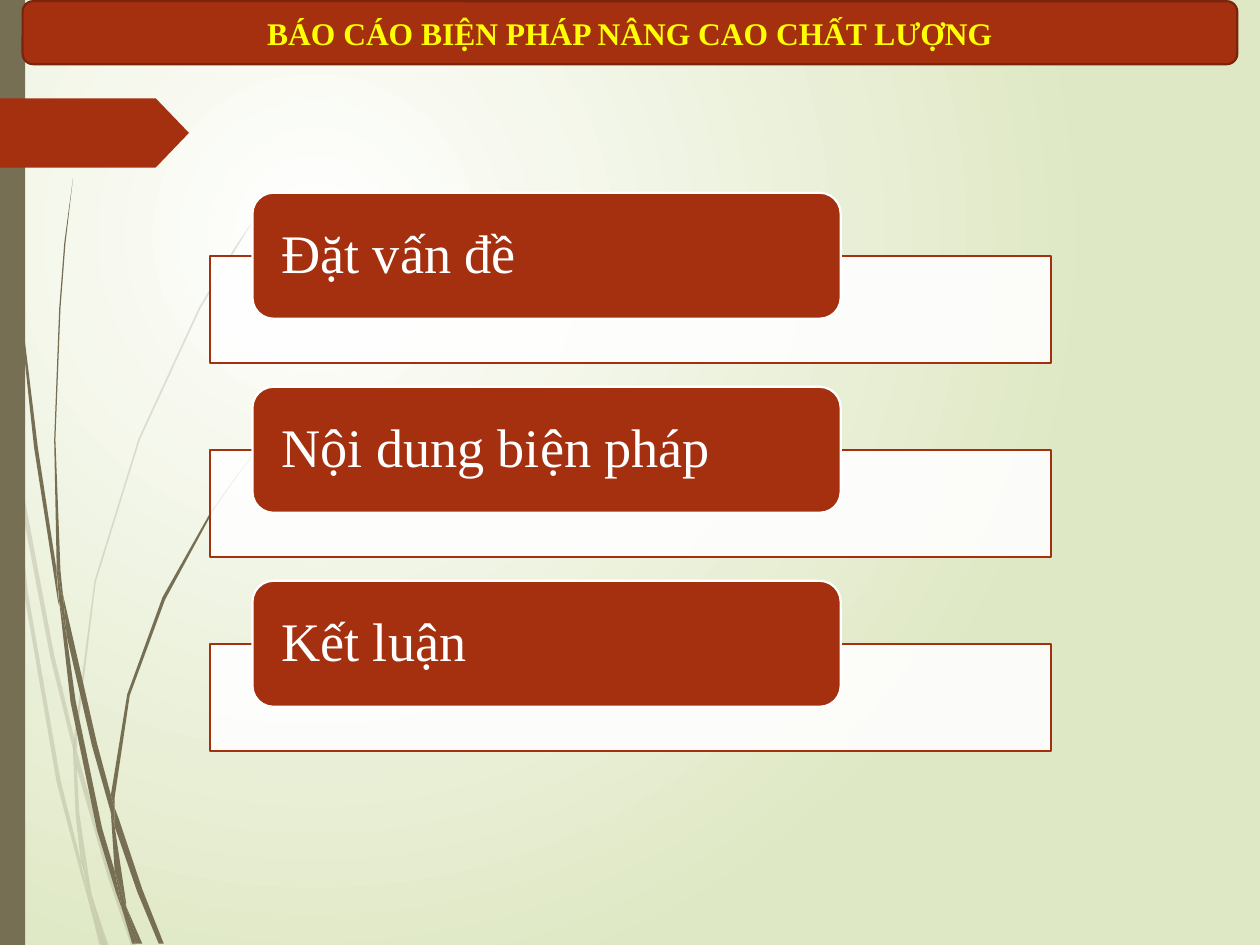
import pptx
import pptx.dml.color
import pptx.enum.shapes
import pptx.enum.text
import pptx.oxml
import pptx.oxml.ns
import pptx.util
import lxml.etree

Inches = pptx.util.Inches
SHAPES = pptx.enum.shapes.MSO_SHAPE
ALIGN = pptx.enum.text.PP_ALIGN

RUST, DARK_RUST, OLIVE = "A53010", "7A240C", "766F54"
WHITE, PALE_GREEN, YELLOW = "FFFFFF", "DFE8C4", "FFFF00"
FONT = "Times New Roman"

FADED_BLADES = [
    "0.08,3.5 0.06,3.22 0,2.82 0,2.99 0.07,3.44",
    "0.4,5.22 0.59,5.99 0.59,5.86 0.43,5.2 0.1,3.45 0.12,3.76",
    "0.64,6.07 0.61,5.96 0.61,6.1 0.85,6.94 1.04,7.5 1.08,7.5 0.88,6.92",
    "0.83,7.5 0.86,7.5 0.73,7.11",
    "0.64,6.83 0.48,6.19 0.22,4.69 0.12,3.76 0.08,3.5 0.19,4.7 0.45,6.21"
    " 0.64,6.93 0.7,7.14 0.69,7.07",
    "0.58,5.99 0.6,6.46 0.64,6.83 0.67,6.92 0.73,7.11 0.72,7.06 0.63,6.46"
    " 0.61,6.1 0.61,6.08",
    "0.61,5.84 0.76,4.62 1.11,3.49 1.59,2.45 1.87,1.98 2.01,1.75 2.17,1.54"
    " 2.17,1.53 2.01,1.75 1.86,1.97 1.58,2.44 1.1,3.48 0.75,4.61 0.59,5.84"
    " 0.59,5.86 0.61,5.96",
    "0.7,7.14 0.79,7.5 0.82,7.5",
    "0.61,6.08 0.61,6.1 0.61,5.96 0.59,5.86 0.58,5.99",
    "0.67,6.92 0.65,6.83 0.69,7.07 0.7,7.14 0.82,7.5 0.83,7.5 0.73,7.11",
]
SOLID_BLADES = [
    "0.05,1.1 0.14,2.33 0.27,3.55 0.46,4.77 0.47,4.81 0.45,4.57 0.45,4.53"
    " 0.3,3.55 0.15,2.32 0.06,1.09 0.04,0.48 0.03,0 0.02,0 0.03,0.48",
    "0.73,5.92 0.88,6.45 0.88,6.33 0.88,6.31 0.77,5.9 0.5,4.72 0.53,5.05",
    "0.94,6.49 0.91,6.41 0.91,6.56 1.09,7.08 1.26,7.49 1.3,7.49 1.13,7.06",
    "0.91,6.91 0.81,6.57 0.6,5.56 0.53,5.05 0.47,4.77 0.56,5.57 0.77,6.59"
    " 0.92,7.08 0.97,7.22 0.96,7.17",
    "0.5,4.72 0.48,4.53 0.44,3.49 0.48,2.45 0.52,1.93 0.58,1.41 0.51,1.93"
    " 0.47,2.45 0.43,3.49 0.45,4.49 0.49,4.72",
    "1.1,7.49 1.13,7.49 1,7.19",
    "0.47,4.77 0.53,5.05 0.5,4.72 0.49,4.72 0.45,4.49 0.45,4.53",
    "0.91,6.33 1.03,5.52 1.31,4.76 1.69,4.06 1.91,3.74 2.03,3.59 2.16,3.44"
    " 2.15,3.44 2.03,3.58 1.91,3.73 1.68,4.05 1.29,4.74 1.01,5.51 0.88,6.31"
    " 0.91,6.41",
    "0.97,7.22 1.05,7.49 1.08,7.49",
    "0.88,6.45 0.91,6.91 0.96,7.06 1,7.19 1,7.16 0.91,6.56 0.9,6.51",
    "0.88,6.45 0.9,6.51 0.91,6.56 0.91,6.41 0.88,6.31 0.88,6.33",
    "0.96,7.06 0.91,6.91 0.96,7.17 0.97,7.22 1.08,7.49 1.1,7.49 1,7.19",
]


def color(hex_code):
    """Turn a hex string into a colour."""
    return pptx.dml.color.RGBColor.from_string(hex_code)


def paint(shape, fill, line=None, opacity=100):
    """Set fill, outline and opacity of a shape, without shadow."""
    shape.shadow.inherit = False
    shape.fill.solid()
    shape.fill.fore_color.rgb = color(fill)
    if opacity < 100:
        swatch = shape.fill._xPr.find(".//" + pptx.oxml.ns.qn("a:srgbClr"))
        alpha = lxml.etree.SubElement(swatch, pptx.oxml.ns.qn("a:alpha"))
        alpha.set("val", str(opacity * 1000))
    if line:
        shape.line.color.rgb = color(line)
        shape.line.width = pptx.util.Pt(1.25)
    else:
        shape.line.fill.background()


def add_block(shapes, kind, left, top, width, height, fill, **look):
    """Add a painted preset shape, measured in inches."""
    block = shapes.add_shape(
        kind, Inches(left), Inches(top), Inches(width), Inches(height))
    paint(block, fill, **look)
    return block


def write(shape, text, size, hex_code, bold=False, align=ALIGN.LEFT,
          inset=0.1, spacing=1.0):
    """Write one vertically centred paragraph into a shape."""
    frame = shape.text_frame
    frame.word_wrap = True
    frame.vertical_anchor = pptx.enum.text.MSO_ANCHOR.MIDDLE
    frame.margin_left = frame.margin_right = Inches(inset)
    frame.margin_top = frame.margin_bottom = 0
    paragraph = frame.paragraphs[0]
    paragraph.alignment = align
    paragraph.line_spacing = spacing
    run = paragraph.add_run()
    run.text = text
    run.font.name = FONT
    run.font.size = pptx.util.Pt(size)
    run.font.bold = bold
    run.font.color.rgb = color(hex_code)


def add_background(slide):
    """Fill the background with a glow from the upper left."""
    fill = slide.background.fill
    fill.gradient()
    for stop, hex_code in zip(fill.gradient_stops, (WHITE, PALE_GREEN)):
        stop.color.rgb = color(hex_code)
    linear = slide.background._cSld.find(".//" + pptx.oxml.ns.qn("a:lin"))
    glow = pptx.oxml.parse_xml(
        f'<a:path {pptx.oxml.ns.nsdecls("a")} path="circle">'
        '<a:fillToRect l="50000" t="50000" r="100000" b="100000"/></a:path>')
    linear.getparent().replace(linear, glow)


def add_grass(slide, left, top, blades, opacity):
    """Draw a tuft of grass blades from a top left corner."""
    tuft = slide.shapes.add_group_shape()
    for blade in blades:
        pairs = [pair.split(",") for pair in blade.split()]
        points = [(Inches(left + float(x)), Inches(top + float(y)))
                  for x, y in pairs]
        outline = tuft.shapes.build_freeform(*points[0])
        outline.add_line_segments(points[1:], close=True)
        paint(outline.convert_to_shape(), OLIVE, opacity=opacity)


def add_side_decoration(slide, left, top, height):
    """Draw the grass, the side bar and the arrow tag."""
    add_grass(slide, left, top, FADED_BLADES, 20)
    add_grass(slide, left, top, SOLID_BLADES, 100)
    add_block(slide.shapes, SHAPES.RECTANGLE, left, top, 0.2, height, OLIVE)
    tag = add_block(slide.shapes, SHAPES.PENTAGON,
                    left, top + 0.78, 1.5, 0.55, RUST)
    tag.adjustments[0] = 0.48


def add_title(slide, left, top, width, height, text):
    """Draw the title banner."""
    banner = add_block(slide.shapes, SHAPES.ROUNDED_RECTANGLE,
                       left, top, width, height, RUST, line=DARK_RUST)
    write(banner, text, 18, YELLOW, bold=True, align=ALIGN.CENTER)


def add_agenda(slide, left, top, width, topics):
    """Stack the topics as tabs that overlap wide panels."""
    agenda = slide.shapes.add_group_shape()
    for index, topic in enumerate(topics):
        tab_top = top + index * 1.54
        add_block(agenda.shapes, SHAPES.RECTANGLE, left, tab_top + 0.5,
                  width, 0.85, WHITE, line=RUST, opacity=90)
        tab = add_block(agenda.shapes, SHAPES.ROUNDED_RECTANGLE,
                        left + width * 0.05, tab_top, width * 0.7, 1,
                        RUST, line=WHITE)
        write(tab, topic, 31, WHITE, inset=0.18, spacing=0.9)


def main():
    """Build and save the slide."""
    deck = pptx.Presentation()
    deck.slide_width, deck.slide_height = Inches(10), Inches(7.5)
    slide = deck.slides.add_slide(deck.slide_layouts[6])
    add_background(slide)
    add_side_decoration(slide, 0, 0, 7.5)
    add_title(slide, 0.18, 0.01, 9.64, 0.5,
              "BÁO CÁO BIỆN PHÁP NÂNG CAO CHẤT LƯỢNG")
    add_agenda(slide, 1.67, 1.53, 6.67,
               ["Đặt vấn đề", "Nội dung biện pháp", "Kết luận"])
    deck.save("out.pptx")


if __name__ == "__main__":
    main()
